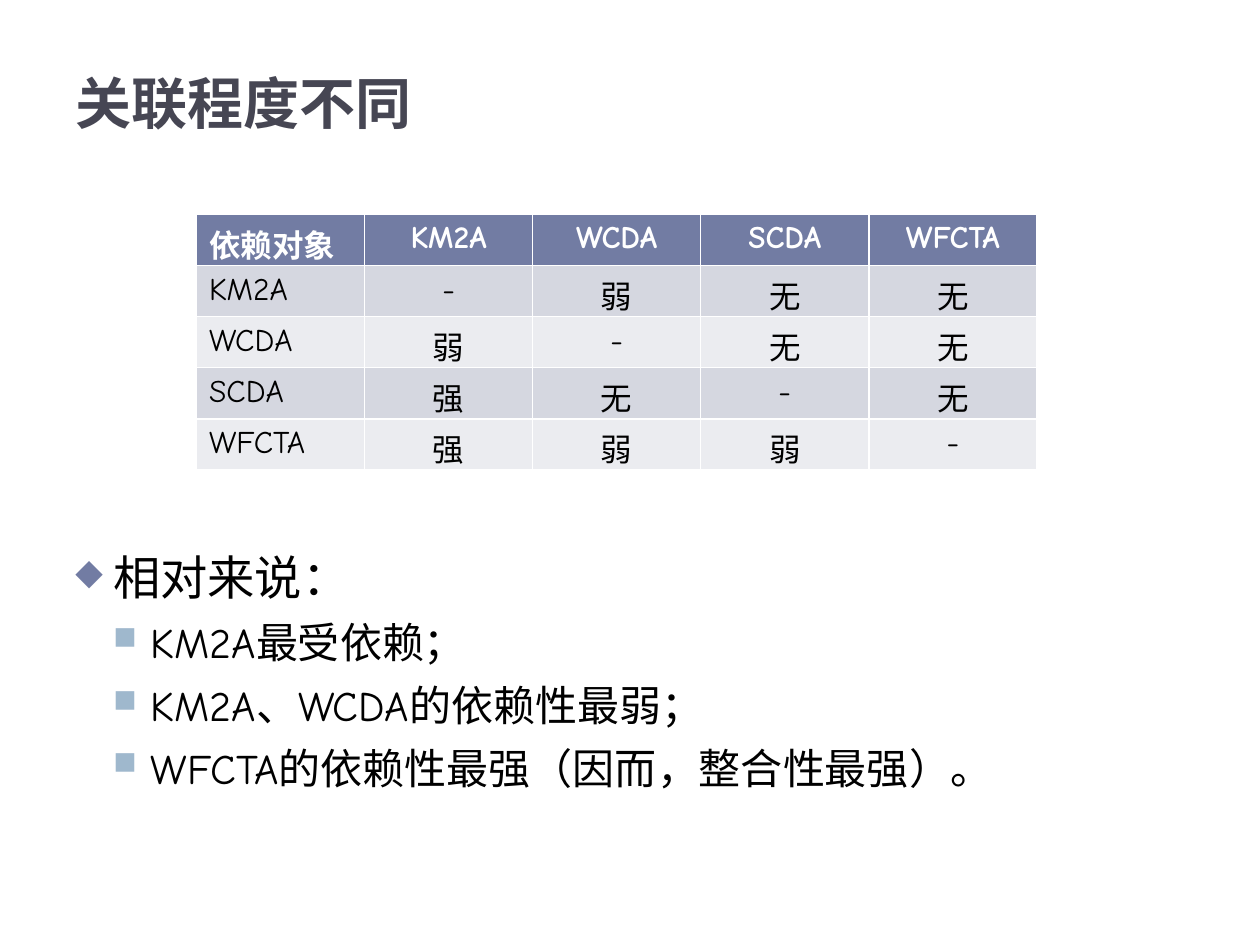
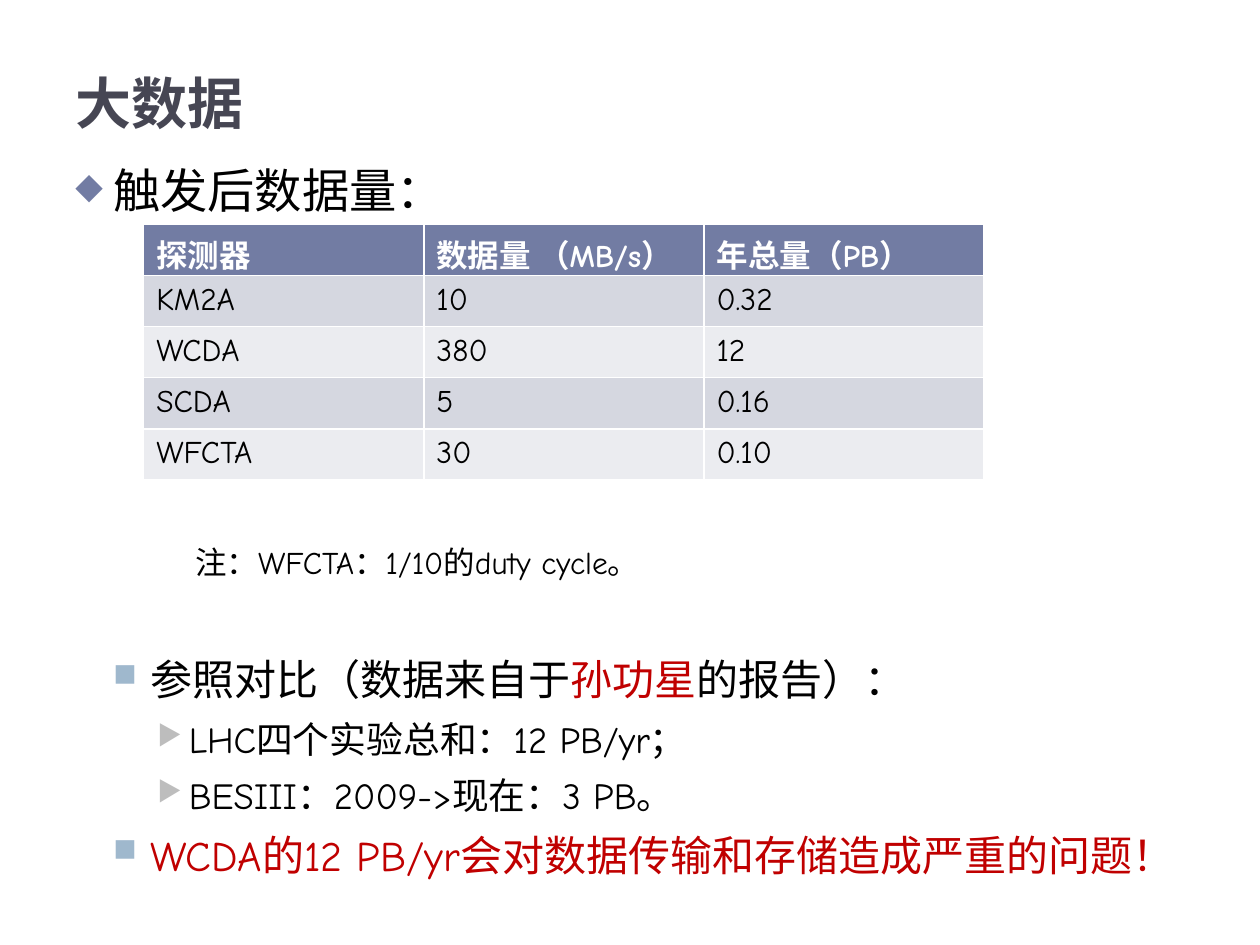
from collections import namedtuple

from lxml import etree
from pptx import Presentation
from pptx.dml.color import RGBColor
from pptx.enum.text import MSO_ANCHOR, PP_ALIGN
from pptx.oxml.ns import qn
from pptx.util import Inches, Pt

CENTER, LEFT = PP_ALIGN.CENTER, PP_ALIGN.LEFT
TOP, BOTTOM = MSO_ANCHOR.TOP, MSO_ANCHOR.BOTTOM

FONT = "Comic Neue"
INK = RGBColor(0x00, 0x00, 0x00)
WHITE = RGBColor(0xFF, 0xFF, 0xFF)
TITLE_GREY = RGBColor(0x46, 0x46, 0x53)
INDIGO = RGBColor(0x72, 0x7C, 0xA3)
SKY = RGBColor(0x9F, 0xB8, 0xCD)
SILVER = RGBColor(0xBD, 0xBD, 0xBD)
RED = RGBColor(0xC0, 0x00, 0x00)
BANDS = RGBColor(0xD5, 0xD7, 0xE0), RGBColor(0xEB, 0xEC, 0xF0)

WIDTH, HEIGHT = Inches(10), Inches(7.5)
COLS, ROWS = 100, 75
TITLE_BOX = (5, 0.5, 90, 10.8)

Level = namedtuple("Level", "size indent hang before bullet color")
HEADING = Level(27, 3, 3, 6, "◆", INDIGO)
POINT = Level(24, 6, 3, 5, "■", SKY)
DETAIL = Level(21, 9, 2.5, 5, "▶", SILVER)
NOTE = Level(18, 9.5, 0, 4, None, None)

DEPENDENCIES = [
    ["依赖对象", "KM2A", "WCDA", "SCDA", "WFCTA"],
    ["KM2A", "-", "弱", "无", "无"],
    ["WCDA", "弱", "-", "无", "无"],
    ["SCDA", "强", "无", "-", "无"],
    ["WFCTA", "强", "弱", "弱", "-"],
]
RANKING = [
    (HEADING, [("相对来说：", INK)]),
    (POINT, [("KM2A最受依赖；", INK)]),
    (POINT, [("KM2A、WCDA的依赖性最弱；", INK)]),
    (POINT, [("WFCTA的依赖性最强（因而，整合性最强）。", INK)]),
]
DATA_RATES = [
    ["探测器", "数据量 （MB/s）", "年总量（PB）"],
    ["KM2A", "10", "0.32"],
    ["WCDA", "380", "12"],
    ["SCDA", "5", "0.16"],
    ["WFCTA", "30", "0.10"],
]
VOLUME_HEADING = [(HEADING, [("触发后数据量：", INK)])]
DUTY_NOTE = [(NOTE, [("注：WFCTA：1/10的duty cycle。", INK)])]
COMPARISON = [
    (POINT, [("参照对比（数据来自于", INK), ("孙功星", RED), ("的报告）：", INK)]),
    (DETAIL, [("LHC四个实验总和：12 PB/yr；", INK)]),
    (DETAIL, [("BESIII：2009->现在：3 PB。", INK)]),
    (POINT, [("WCDA的12 PB/yr会对数据传输和存储造成严重的问题！", RED)]),
]


def across(cols):
    """Return the length of a number of grid columns."""
    return round(WIDTH * cols / COLS)


def place(box):
    """Turn a box in grid columns and rows into slide lengths."""
    x, y, w, h = box
    return across(x), round(HEIGHT * y / ROWS), across(w), round(HEIGHT * h / ROWS)


def style_run(r, size, color, bold=False):
    """Give a run the shared font with its size and colour."""
    r.font.name = FONT
    r.font.size = Pt(size)
    r.font.bold = bold
    r.font.color.rgb = color


def add_frame(s, box, anchor=TOP):
    """Add a wrapping text box and return its text frame."""
    tf = s.shapes.add_textbox(*place(box)).text_frame
    tf.word_wrap = True
    tf.vertical_anchor = anchor
    return tf


def format_level(p, level):
    """Set the spacing, indent and bullet of an outline level."""
    p.space_before, p.space_after = Pt(level.before), Pt(2)
    pPr = p._p.get_or_add_pPr()
    pPr.set("marL", str(across(level.indent)))
    pPr.set("indent", str(-across(level.hang)))
    if level.bullet:
        color = etree.SubElement(pPr, qn("a:buClr"))
        etree.SubElement(color, qn("a:srgbClr"), val=str(level.color))
        etree.SubElement(pPr, qn("a:buSzPct"), val="76000")
        etree.SubElement(pPr, qn("a:buChar"), char=level.bullet)


def add_title(s, text):
    """Add the slide title, resting on the bottom of its box."""
    tf = add_frame(s, TITLE_BOX, BOTTOM)
    tf.text = text
    style_run(tf.paragraphs[0].runs[0], 32, TITLE_GREY, True)


def add_outline(s, box, items):
    """Add outline paragraphs made of coloured runs."""
    tf = add_frame(s, box)
    for i, (level, parts) in enumerate(items):
        p = tf.add_paragraph() if i else tf.paragraphs[0]
        format_level(p, level)
        for text, color in parts:
            r = p.add_run()
            r.text = text
            style_run(r, level.size, color)


def add_grid(s, box, rows, align):
    """Add a banded table whose columns after the first share an alignment."""
    table = s.shapes.add_table(len(rows), len(rows[0]), *place(box)).table
    for i, row in enumerate(rows):
        for j, text in enumerate(row):
            cell = table.cell(i, j)
            cell.fill.solid()
            cell.fill.fore_color.rgb = BANDS[(i - 1) % 2] if i else INDIGO
            cell.text_frame.text = text
            p = cell.text_frame.paragraphs[0]
            p.alignment = align if j else LEFT
            style_run(p.runs[0], 18, INK if i else WHITE, i == 0)


def add_slide(prs, title):
    """Add a blank slide with its title."""
    s = prs.slides.add_slide(prs.slide_layouts[6])
    add_title(s, title)
    return s


def build_dependencies(prs):
    """Build the slide on how strongly the detectors depend on each other."""
    s = add_slide(prs, "关联程度不同")
    add_grid(s, (15.6, 17, 66.7, 20.3), DEPENDENCIES, CENTER)
    add_outline(s, (5, 43, 90, 19.7), RANKING)


def build_big_data(prs):
    """Build the slide on data volumes after triggering."""
    s = add_slide(prs, "大数据")
    add_outline(s, (5, 12.3, 90, 5.5), VOLUME_HEADING)
    add_grid(s, (11.4, 17.8, 66.7, 20.3), DATA_RATES, LEFT)
    add_outline(s, (5, 42.6, 90, 4), DUTY_NOTE)
    add_outline(s, (5, 51.4, 90, 15.9), COMPARISON)


def main():
    """Build and save the presentation."""
    prs = Presentation()
    prs.slide_width, prs.slide_height = WIDTH, HEIGHT
    build_dependencies(prs)
    build_big_data(prs)
    prs.save("out.pptx")


if __name__ == "__main__":
    main()
